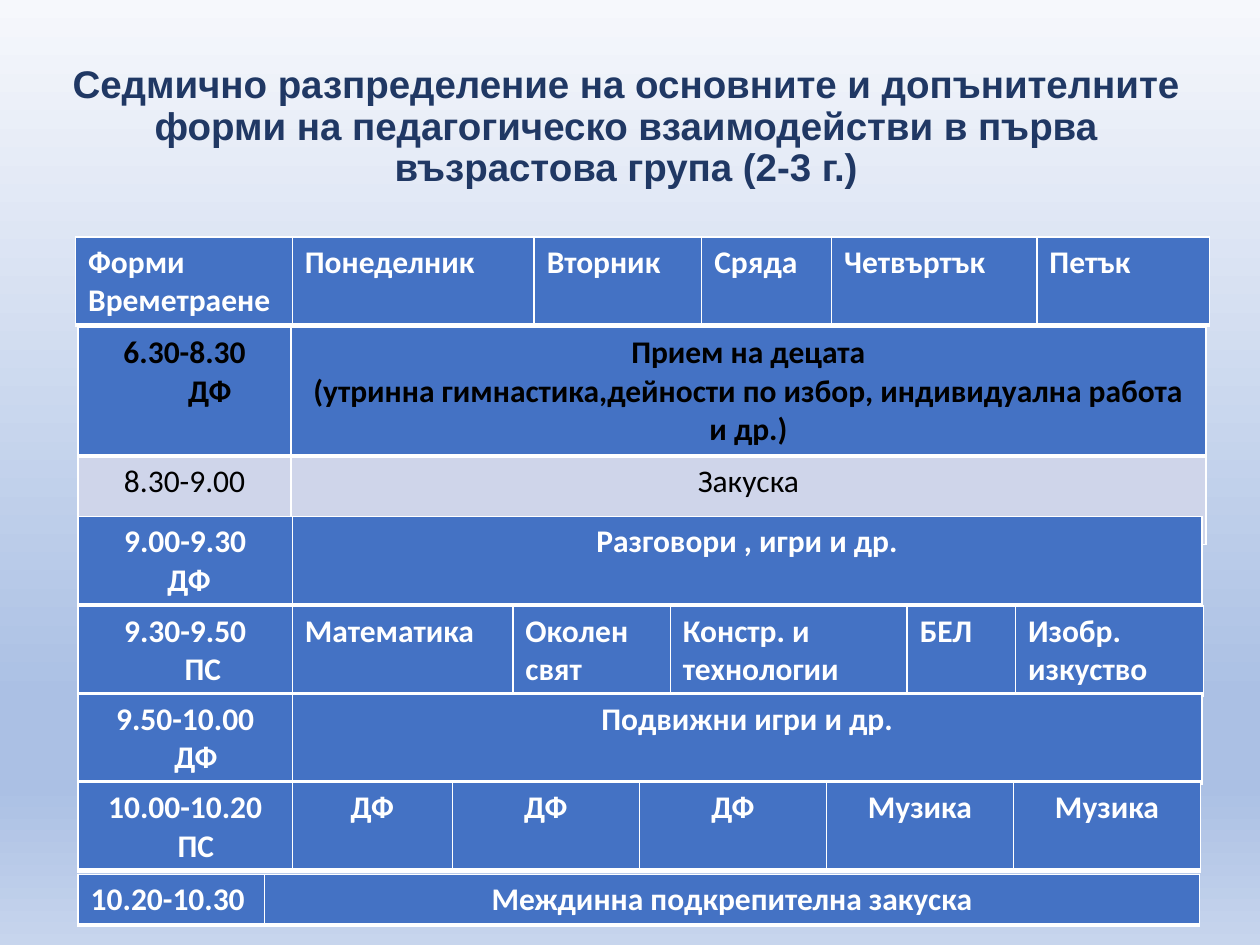
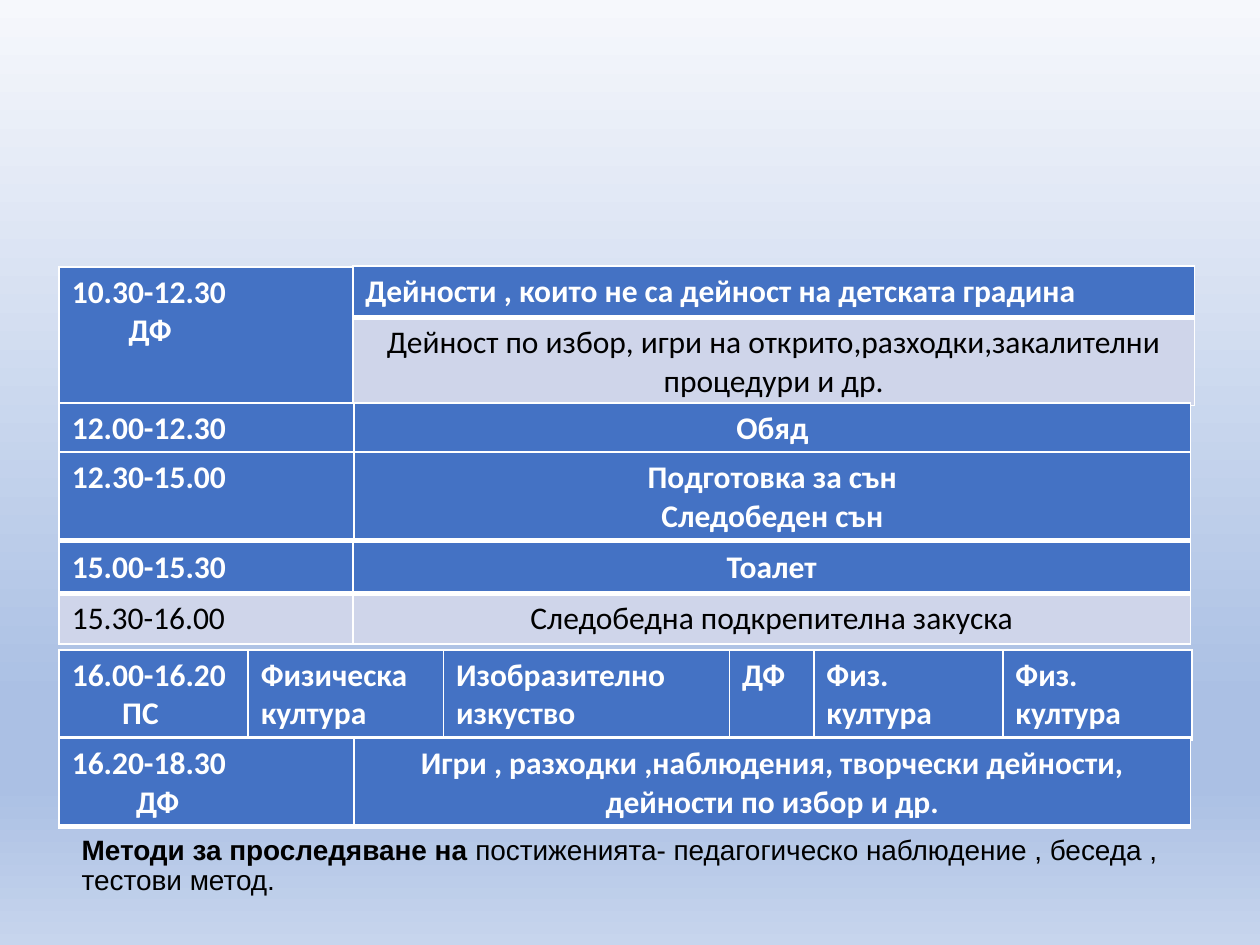
import dataclasses

import lxml.etree
import pptx
import pptx.dml.color
import pptx.enum.text
import pptx.oxml.ns
import pptx.util

RGB = pptx.dml.color.RGBColor
ALIGN = pptx.enum.text.PP_ALIGN
qn = pptx.oxml.ns.qn

# The slide is a grid of 100 columns by 75 rows.
WIDTH, HEIGHT = pptx.util.Inches(10), pptx.util.Inches(7.5)
COLUMN, ROW = WIDTH / 100, HEIGHT / 75

WHITE = RGB(0xFF, 0xFF, 0xFF)
BLACK = RGB(0x00, 0x00, 0x00)
NAVY = RGB(0x20, 0x38, 0x64)
BLUE = RGB(0x44, 0x72, 0xC4)
PALE_BLUE = RGB(0xCF, 0xD5, 0xEA)
SKY_STOPS = [
    (0, RGB(0xF6, 0xF8, 0xFC)),
    (74, RGB(0xAB, 0xC0, 0xE4)),
    (83, RGB(0xAB, 0xC0, 0xE4)),
    (100, RGB(0xC7, 0xD5, 0xED)),
]

TABLE_FONT = {"name": "Calibri", "size": pptx.util.Pt(18)}
HEADING_FONT = {"name": "Arial", "size": pptx.util.Pt(22), "bold": True}
METHODS_FONT = {"name": "Arial", "size": pptx.util.Pt(16)}
THIN, THICK = pptx.util.Pt(1), pptx.util.Pt(3)

# Row heights in grid rows, by number of text lines.
ONE_LINE, TWO_LINES, THREE_LINES = 4, 7, 10.2


@dataclasses.dataclass(frozen=True)
class RowStyle:
    fill: RGB
    color: RGB
    bold: bool


MAIN = RowStyle(BLUE, WHITE, True)
MORNING = RowStyle(BLUE, BLACK, True)
MEAL = RowStyle(PALE_BLUE, BLACK, False)


@dataclasses.dataclass
class Entry:
    """Cell text; indent, in grid columns, moves the lines after the first."""
    text: str
    align: ALIGN = ALIGN.LEFT
    indent: float = 0


def centred(text, indent=0):
    return Entry(text, ALIGN.CENTER, indent)


@dataclasses.dataclass
class Band:
    """One row of a timetable block."""
    height: float
    entries: list
    style: RowStyle = MAIN


def grid_box(left, top, width, height):
    return [round(n) for n in (left * COLUMN, top * ROW, width * COLUMN, height * ROW)]


def write_run(paragraph, text, color, **font_values):
    run = paragraph.add_run()
    run.text = text
    for key, value in font_values.items():
        setattr(run.font, key, value)
    run.font.color.rgb = color


def add_sky_slide(deck):
    slide = deck.slides.add_slide(deck.slide_layouts[6])
    fill = slide.background.fill
    fill.gradient()
    fill.gradient_angle = 270
    stops = next(slide.element.iter(qn("a:gsLst")))
    for stop in list(stops):
        stops.remove(stop)
    for percent, color in SKY_STOPS:
        stop = lxml.etree.SubElement(stops, qn("a:gs"), pos=str(percent * 1000))
        lxml.etree.SubElement(stop, qn("a:srgbClr"), val=str(color))
    return slide


def add_statement(slide, box, align, parts):
    """Middle-anchored text made of (text, colour, font) parts."""
    frame = slide.shapes.add_textbox(*grid_box(*box)).text_frame
    frame.word_wrap = True
    frame.vertical_anchor = pptx.enum.text.MSO_ANCHOR.MIDDLE
    paragraph = frame.paragraphs[0]
    paragraph.alignment = align
    paragraph.line_spacing = 0.9
    for text, color, font in parts:
        write_run(paragraph, text, color, **font)


def draw_borders(cell, top, bottom):
    properties = cell._tc.get_or_add_tcPr()
    sides = {"a:lnL": THIN, "a:lnR": THIN, "a:lnT": top, "a:lnB": bottom}
    for position, (side, width) in enumerate(sides.items()):
        line = lxml.etree.Element(qn(side), w=str(int(width)))
        solid = lxml.etree.SubElement(line, qn("a:solidFill"))
        lxml.etree.SubElement(solid, qn("a:srgbClr"), val=str(WHITE))
        properties.insert(position, line)


def fill_cell(cell, entry, style):
    cell.fill.solid()
    cell.fill.fore_color.rgb = style.fill
    frame = cell.text_frame
    for number, line in enumerate(entry.text.split("\n")):
        paragraph = frame.add_paragraph() if number else frame.paragraphs[0]
        paragraph.alignment = entry.align
        if number and entry.indent:
            properties = paragraph._p.get_or_add_pPr()
            properties.set("marL", str(round(entry.indent * COLUMN)))
        write_run(paragraph, line, style.color, bold=style.bold, **TABLE_FONT)


def add_block(slide, left, top, widths, *bands):
    """A piece of the timetable; widths and heights are in grid units."""
    box = grid_box(left, top, sum(widths), sum(band.height for band in bands))
    table = slide.shapes.add_table(len(bands), len(widths), *box).table
    table.horz_banding = False
    for column, width in zip(table.columns, widths):
        column.width = round(width * COLUMN)
    for index, band in enumerate(bands):
        table.rows[index].height = round(band.height * ROW)
        top_line, bottom_line = (THICK, THIN) if index else (THIN, THICK)
        for cell, entry in zip(table.rows[index].cells, band.entries):
            fill_cell(cell, entry, band.style)
            draw_borders(cell, top_line, bottom_line)


def build_morning(deck):
    slide = add_sky_slide(deck)
    heading = ("Седмично разпределение на основните и допънителните форми на "
               "педагогическо взаимодействи в първа възрастова група (2-3 г.)")
    add_statement(slide, (4.7, 3.9, 90, 12.5), ALIGN.CENTER,
                  [(heading, NAVY, HEADING_FONT)])

    left, time = 6.2, 17
    wide = [time, 72.2]
    weekdays = ["Форми\nВреметраене", "Понеделник", "Вторник", "Сряда",
                "Четвъртък", "Петък"]
    add_block(slide, 6, 18.8, [17.2, 19.2, 13.3, 10.3, 16.3, 13.7],
              Band(TWO_LINES, [Entry(day) for day in weekdays]))

    welcome = ("Прием на децата\n(утринна гимнастика,дейности по избор, "
               "индивидуална работа и др.)")
    add_block(slide, left, 26, [16.9, 72.6],
              Band(THREE_LINES, [centred("6.30-8.30\nДФ", 4), centred(welcome)], MORNING),
              Band(TWO_LINES, [centred("8.30-9.00"), centred("Закуска")], MEAL))

    subjects = ["Математика", "Околен свят", "Констр. и технологии", "БЕЛ",
                "Изобр.\nизкуство"]
    add_block(slide, left, 48.1, [time, 17.5, 12.5, 18.8, 8.6, 14.9],
              Band(TWO_LINES, [centred("9.30-9.50\nПС", 2.8)]
                   + [Entry(subject) for subject in subjects]))
    add_block(slide, left, 55.1, wide,
              Band(TWO_LINES, [centred("9.50-10.00\nДФ", 1.7),
                               centred("Подвижни игри и др.")]))

    lessons = ["ДФ"] * 3 + ["Музика"] * 2
    add_block(slide, left, 62.1, [time, 12.7] + [14.85] * 4,
              Band(TWO_LINES, [centred("10.00-10.20\nПС", 1.7)]
                   + [centred(lesson) for lesson in lessons]))
    add_block(slide, left, 69.4, [14.8, 74.2],
              Band(ONE_LINE, [Entry("10.20-10.30"),
                              centred("Междинна подкрепителна закуска")]))
    # Last, so that it lies over the end of the breakfast row.
    add_block(slide, left, 41, wide,
              Band(TWO_LINES, [centred("9.00-9.30\nДФ", 0.6),
                               centred("Разговори , игри и др.")]))


def build_afternoon(deck):
    slide = add_sky_slide(deck)
    add_statement(slide, (5.5, 66.4, 90, 4.7), ALIGN.LEFT, [
        ("Методи за проследяване на ", BLACK, {**METHODS_FONT, "bold": True}),
        ("постиженията- педагогическо наблюдение , беседа , тестови метод.",
         BLACK, METHODS_FONT),
    ])

    left, time = 4.7, 23.4
    wide = [time, 66.4]
    add_block(slide, left, 21.2, [time],
              Band(10.9, [Entry("10.30-12.30\nДФ", indent=4.5)]))
    outdoors = ("Дейност по избор, игри на открито,разходки,закалителни "
                "процедури и др.")
    add_block(slide, 28, 21.1, [66.8],
              Band(4.1, [Entry("Дейности , които не са дейност на детската градина")]),
              Band(TWO_LINES, [centred(outdoors)], MEAL))
    add_block(slide, left, 32, wide,
              Band(ONE_LINE, [Entry("12.00-12.30"), centred("Обяд")]))
    add_block(slide, left, 35.9, wide,
              Band(TWO_LINES, [Entry("12.30-15.00"),
                               centred("Подготовка за сън\nСледобеден сън")]))
    add_block(slide, left, 43, [23.3, 66.5],
              Band(4.1, [Entry("15.00-15.30"), centred("Тоалет")]),
              Band(ONE_LINE, [Entry("15.30-16.00"),
                              centred("Следобедна подкрепителна закуска")], MEAL))

    lessons = ["Физическа\nкултура", "Изобразително изкуство", "ДФ",
               "Физ. култура", "Физ. култура"]
    add_block(slide, left, 51.6, [15, 15.5, 22.7, 6.7, 15, 15],
              Band(TWO_LINES, [Entry("16.00-16.20\nПС", indent=4)]
                   + [Entry(lesson) for lesson in lessons]))
    closing = "Игри , разходки ,наблюдения, творчески дейности, дейности по избор и др."
    add_block(slide, left, 58.6, wide,
              Band(TWO_LINES, [Entry("16.20-18.30\nДФ", indent=5.1), centred(closing)]))


def main():
    deck = pptx.Presentation()
    deck.slide_width, deck.slide_height = WIDTH, HEIGHT
    build_morning(deck)
    build_afternoon(deck)
    deck.save("out.pptx")


if __name__ == "__main__":
    main()
